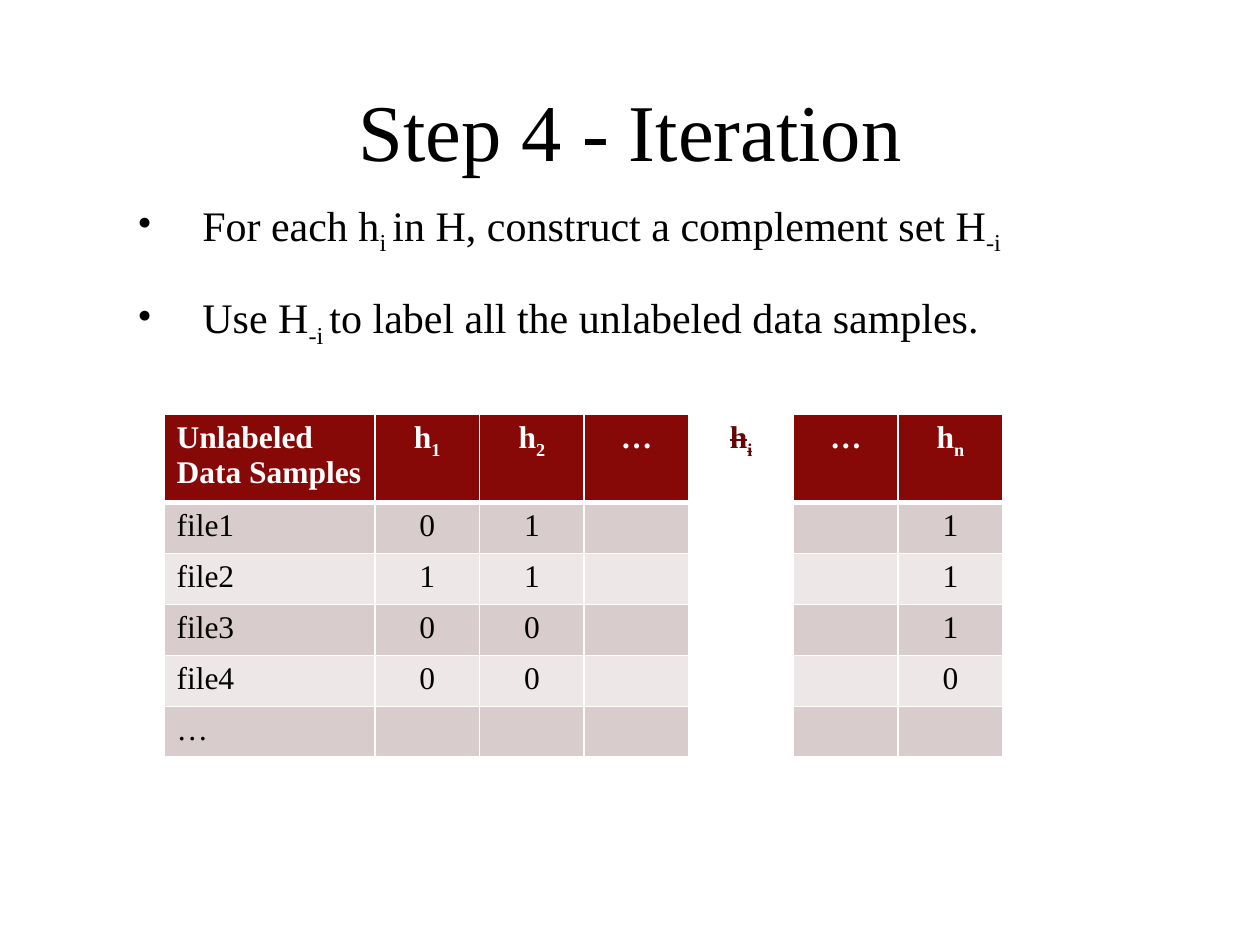
from collections import namedtuple
from dataclasses import dataclass

from lxml import etree
from pptx import Presentation
from pptx.dml.color import RGBColor
from pptx.enum.text import MSO_ANCHOR, PP_ALIGN
from pptx.oxml.ns import qn
from pptx.util import Pt

MIDDLE, TOP = MSO_ANCHOR.MIDDLE, MSO_ANCHOR.TOP
LEFT, CENTER = PP_ALIGN.LEFT, PP_ALIGN.CENTER
EMU_PER_PX = 914400 / 126
TITLE_ONLY = 5
Box = namedtuple("Box", "left top width height")


@dataclass(frozen=True)
class Theme:
    """Hold the colours and type sizes of the slide."""

    font: str = "Times New Roman"
    text: str = "000000"
    white: str = "FFFFFF"
    header: str = "860908"
    struck: str = "640706"
    odd_row: str = "D9CCCC"
    even_row: str = "EDE7E7"
    title_size: int = 46
    bullet_size: int = 24
    table_size: int = 18


THEME = Theme()
BULLETS = [
    [("For each h", False), ("i ", True),
     ("in H, construct a complement set H", False), ("-i", True)],
    [("Use H", False), ("-i ", True),
     ("to label all the unlabeled data samples.", False)],
]
HEADINGS = [
    [("Unlabeled Data Samples", False)],
    [("h", False), ("1", True)],
    [("h", False), ("2", True)],
    [("…", False)],
    [("h", False), ("i", True)],
    [("…", False)],
    [("h", False), ("n", True)],
]
ROWS = [
    ["file1", "0", "1", "", "", "", "1"],
    ["file2", "1", "1", "", "", "", "1"],
    ["file3", "0", "0", "", "", "", "1"],
    ["file4", "0", "0", "", "", "", "0"],
    ["…", "", "", "", "", "", ""],
]
STRUCK_COLUMN = 4


def px(length):
    """Turn pixels into EMU."""
    return round(length * EMU_PER_PX)


def write_text(paragraph, pieces, size, color=THEME.text, align=LEFT,
               bold=False, strike=False):
    """Write (text, is_subscript) pieces into a paragraph."""
    paragraph.alignment = align
    paragraph.font.size = Pt(size)
    for text, is_subscript in pieces:
        run = paragraph.add_run()
        run.text = text
        run.font.name = THEME.font
        run.font.size = Pt(size)
        run.font.bold = bold
        run.font.color.rgb = RGBColor.from_string(color)
        properties = run._r.get_or_add_rPr()
        if is_subscript:
            properties.set("baseline", "-25000")
        if strike:
            properties.set("strike", "sngStrike")


def add_bullet(paragraph, indent):
    """Give a paragraph a hanging bullet."""
    properties = paragraph._p.get_or_add_pPr()
    properties.set("marL", str(px(indent)))
    properties.set("indent", str(-px(indent)))
    etree.SubElement(properties, qn("a:buSzPct")).set("val", "90000")
    etree.SubElement(properties, qn("a:buChar")).set("char", "•")


def set_borders(cell, top, bottom):
    """Draw white borders round a cell, with widths in points."""
    properties = cell._tc.get_or_add_tcPr()
    for side, width in (("L", 1), ("R", 1), ("T", top), ("B", bottom)):
        line = etree.SubElement(properties, qn(f"a:ln{side}"), w=str(Pt(width)))
        fill = etree.SubElement(line, qn("a:solidFill"))
        etree.SubElement(fill, qn("a:srgbClr")).set("val", THEME.white)


def place_title(slide, box):
    """Place the slide title."""
    title = slide.shapes.title
    title.left, title.top, title.width, title.height = map(px, box)
    title.text_frame.vertical_anchor = MIDDLE
    write_text(title.text_frame.paragraphs[0], [("Step 4 - Iteration", False)],
               THEME.title_size, align=CENTER)


def place_bullets(slide, box):
    """Place the bulleted steps."""
    frame = slide.shapes.add_textbox(*map(px, box)).text_frame
    frame.word_wrap = True
    frame.vertical_anchor = TOP
    for index, pieces in enumerate(BULLETS):
        paragraph = frame.add_paragraph() if index else frame.paragraphs[0]
        if index:
            paragraph.space_before = Pt(20)
        add_bullet(paragraph, 64)
        write_text(paragraph, pieces, THEME.bullet_size)


def place_table(slide, box, name_width, header_height):
    """Place the table of labels with the struck column left blank."""
    shape = slide.shapes.add_table(len(ROWS) + 1, len(HEADINGS), *map(px, box))
    table = shape.table
    label_width = (box.width - name_width) / (len(HEADINGS) - 1)
    row_height = (box.height - header_height) / len(ROWS)
    for index, column in enumerate(table.columns):
        column.width = px(label_width if index else name_width)
    for index, row in enumerate(table.rows):
        row.height = px(row_height if index else header_height)

    body = [[[(text, False)] if text else [] for text in row] for row in ROWS]
    for row_index, row in enumerate([HEADINGS] + body):
        is_header = row_index == 0
        row_fill = THEME.odd_row if row_index % 2 else THEME.even_row
        for column_index, pieces in enumerate(row):
            is_struck = column_index == STRUCK_COLUMN
            cell = table.cell(row_index, column_index)
            set_borders(cell, top=3 if row_index == 1 else 1,
                        bottom=3 if is_header else 1)
            fill = THEME.header if is_header else row_fill
            cell.fill.solid()
            cell.fill.fore_color.rgb = RGBColor.from_string(
                THEME.white if is_struck else fill)
            heading_color = THEME.struck if is_struck else THEME.white
            write_text(cell.text_frame.paragraphs[0], pieces, THEME.table_size,
                       color=heading_color if is_header else THEME.text,
                       align=CENTER if column_index else LEFT,
                       bold=is_header, strike=is_header and is_struck)


def main():
    """Build and save the presentation."""
    presentation = Presentation()
    presentation.slide_width, presentation.slide_height = px(1260), px(945)
    slide = presentation.slides.add_slide(presentation.slide_layouts[TITLE_ONLY])
    place_title(slide, Box(126, 69, 1008, 120))
    place_bullets(slide, Box(126, 193, 1008, 200))
    place_table(slide, Box(164, 414, 839, 336), name_width=211, header_height=81)
    presentation.save("out.pptx")


if __name__ == "__main__":
    main()
